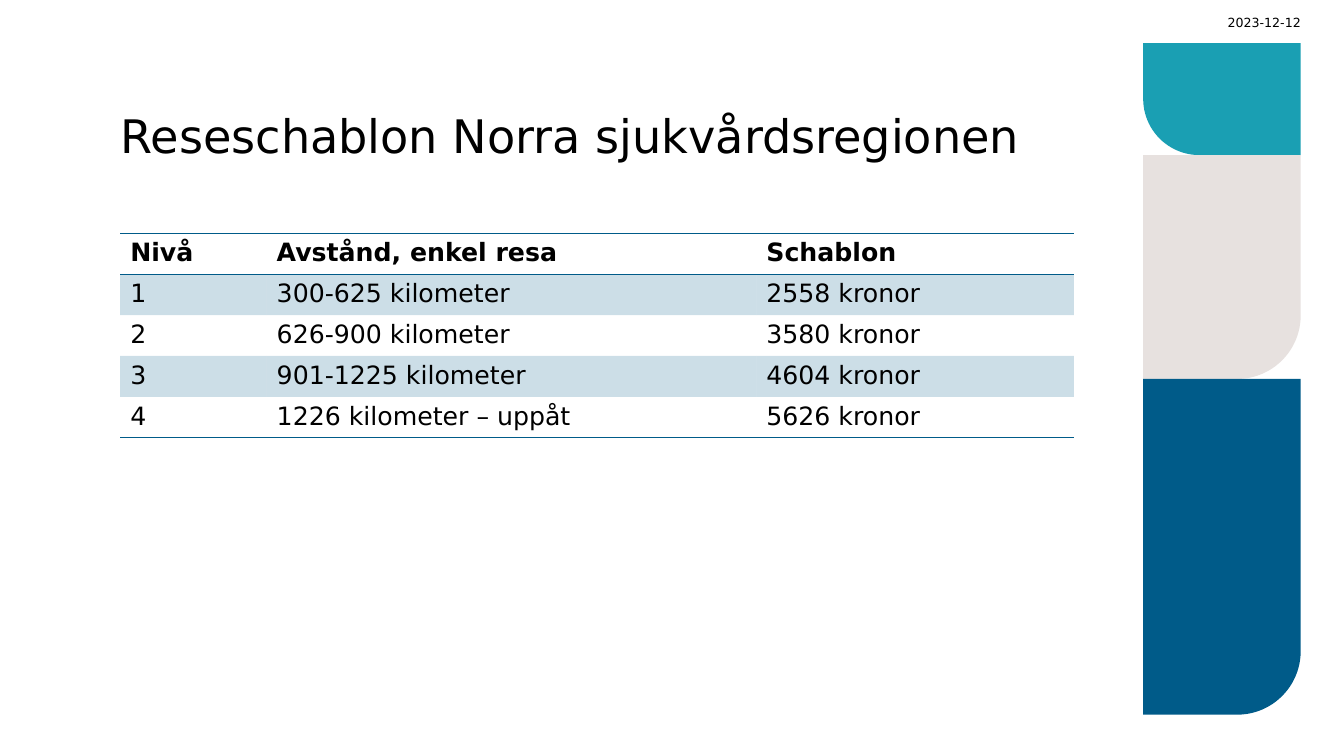
"""Builds a slide with a travel allowance table and a column of coloured panels."""
from dataclasses import dataclass
from math import cos, pi, sin

from lxml import etree
from pptx import Presentation
from pptx.dml.color import RGBColor
from pptx.enum.text import MSO_ANCHOR, PP_ALIGN
from pptx.oxml.ns import qn
from pptx.util import Cm, Pt

BLACK = RGBColor(0x00, 0x00, 0x00)
TEAL = RGBColor(0x1A, 0x9F, 0xB3)
SAND = RGBColor(0xE7, 0xE1, 0xDF)
BLUE = RGBColor(0x00, 0x5B, 0x89)
LEFT, RIGHT = PP_ALIGN.LEFT, PP_ALIGN.RIGHT
MIDDLE, BOTTOM = MSO_ANCHOR.MIDDLE, MSO_ANCHOR.BOTTOM
FONT = "DejaVu Sans"
NO_STYLE = "{2D5ABB26-0587-4C30-8999-92F81FD0307C}"

PANEL_LEFT, PANEL_TOP, PANEL_WIDTH, PANEL_UNIT = 28.81, 1.09, 3.97, 2.82
ARC_STEPS = 24
COL_WIDTHS = (3.69, 12.34, 8.0)
ROW_HEIGHT = 1.03
ROWS = (
    ("Nivå", "Avstånd, enkel resa", "Schablon"),
    ("1", "300-625 kilometer", "2558 kronor"),
    ("2", "626-900 kilometer", "3580 kronor"),
    ("3", "901-1225 kilometer", "4604 kronor"),
    ("4", "1226 kilometer – uppåt", "5626 kronor"),
)


@dataclass(frozen=True)
class Panel:
    units: int
    radius: float
    color: RGBColor
    round_left: bool = False


@dataclass(frozen=True)
class Label:
    text: str
    box: tuple[float, float, float, float]
    size: int
    anchor: MSO_ANCHOR
    align: PP_ALIGN
    spacing: float = 1.0


PANELS = (
    Panel(1, 1.42, TEAL, round_left=True),
    Panel(2, 1.6, SAND),
    Panel(3, 1.6, BLUE),
)
LABELS = (
    Label("Reseschablon Norra sjukvårdsregionen", (3.05, 1.19, 24, 2.92), 33, BOTTOM, LEFT, 1.1),
    Label("2023-12-12", (30.28, 0.38, 2.5, 0.38), 9, MIDDLE, RIGHT),
)


def format_run(r, size: int, bold: bool = False) -> None:
    for name, value in {"name": FONT, "size": Pt(size), "bold": bold}.items():
        setattr(r.font, name, value)
    r.font.color.rgb = BLACK


def add_panel(s, panel: Panel, top: float) -> None:
    height = panel.units * PANEL_UNIT
    points = [(0, 0), (0, height)]
    for i in range(ARC_STEPS + 1):
        angle = pi / 2 * (1 - i / ARC_STEPS)
        points.append((PANEL_WIDTH - panel.radius * (1 - cos(angle)),
                       height - panel.radius * (1 - sin(angle))))
    points.append((PANEL_WIDTH, 0))
    if panel.round_left:
        points = [(PANEL_WIDTH - x, y) for x, y in points]
    outline = [(Cm(PANEL_LEFT + x), Cm(top + y)) for x, y in points]
    fb = s.shapes.build_freeform(*outline[0])
    fb.add_line_segments(outline[1:], close=True)
    sp = fb.convert_to_shape()
    sp.shadow.inherit = False
    sp.fill.solid()
    sp.fill.fore_color.rgb = panel.color
    sp.line.fill.background()


def add_label(s, label: Label) -> None:
    tf = s.shapes.add_textbox(*map(Cm, label.box)).text_frame
    layout = {"word_wrap": True, "vertical_anchor": label.anchor, "margin_left": 0,
              "margin_top": 0, "margin_right": 0, "margin_bottom": 0}
    for name, value in layout.items():
        setattr(tf, name, value)
    p = tf.paragraphs[0]
    p.alignment, p.line_spacing = label.align, label.spacing
    r = p.add_run()
    r.text = label.text
    format_run(r, label.size)


def add_border(cell, tag: str) -> None:
    ln = etree.SubElement(cell._tc.get_or_add_tcPr(), qn(tag), w=str(Pt(1)))
    fill = etree.SubElement(ln, qn("a:solidFill"))
    etree.SubElement(fill, qn("a:srgbClr"), val=str(BLUE))


def fill_cell(cell, shaded: bool) -> None:
    if not shaded:
        cell.fill.background()
        return
    cell.fill.solid()
    cell.fill.fore_color.rgb = BLUE
    color = cell._tc.tcPr.find(qn("a:solidFill")).find(qn("a:srgbClr"))
    etree.SubElement(color, qn("a:alpha"), val="20000")


def add_allowance_table(s) -> None:
    size = Cm(sum(COL_WIDTHS)), Cm(ROW_HEIGHT * len(ROWS))
    table = s.shapes.add_table(len(ROWS), len(COL_WIDTHS), Cm(3.03), Cm(5.88), *size).table
    table.horz_banding = False
    table._tbl.tblPr.find(qn("a:tableStyleId")).text = NO_STYLE
    for column, width in zip(table.columns, COL_WIDTHS):
        column.width = Cm(width)
    for i, texts in enumerate(ROWS):
        table.rows[i].height = Cm(ROW_HEIGHT)
        for j, text in enumerate(texts):
            cell = table.cell(i, j)
            if i == 0:
                add_border(cell, "a:lnT")
            if i in (0, len(ROWS) - 1):
                add_border(cell, "a:lnB")
            fill_cell(cell, shaded=i % 2 == 1)
            r = cell.text_frame.paragraphs[0].add_run()
            r.text = text
            format_run(r, 18, bold=i == 0)


def main() -> None:
    prs = Presentation()
    prs.slide_width, prs.slide_height = Cm(33.87), Cm(19.05)
    s = prs.slides.add_slide(prs.slide_layouts[6])
    top = PANEL_TOP
    for panel in PANELS:
        add_panel(s, panel, top)
        top += panel.units * PANEL_UNIT
    for label in LABELS:
        add_label(s, label)
    add_allowance_table(s)
    prs.save("out.pptx")


if __name__ == "__main__":
    main()
